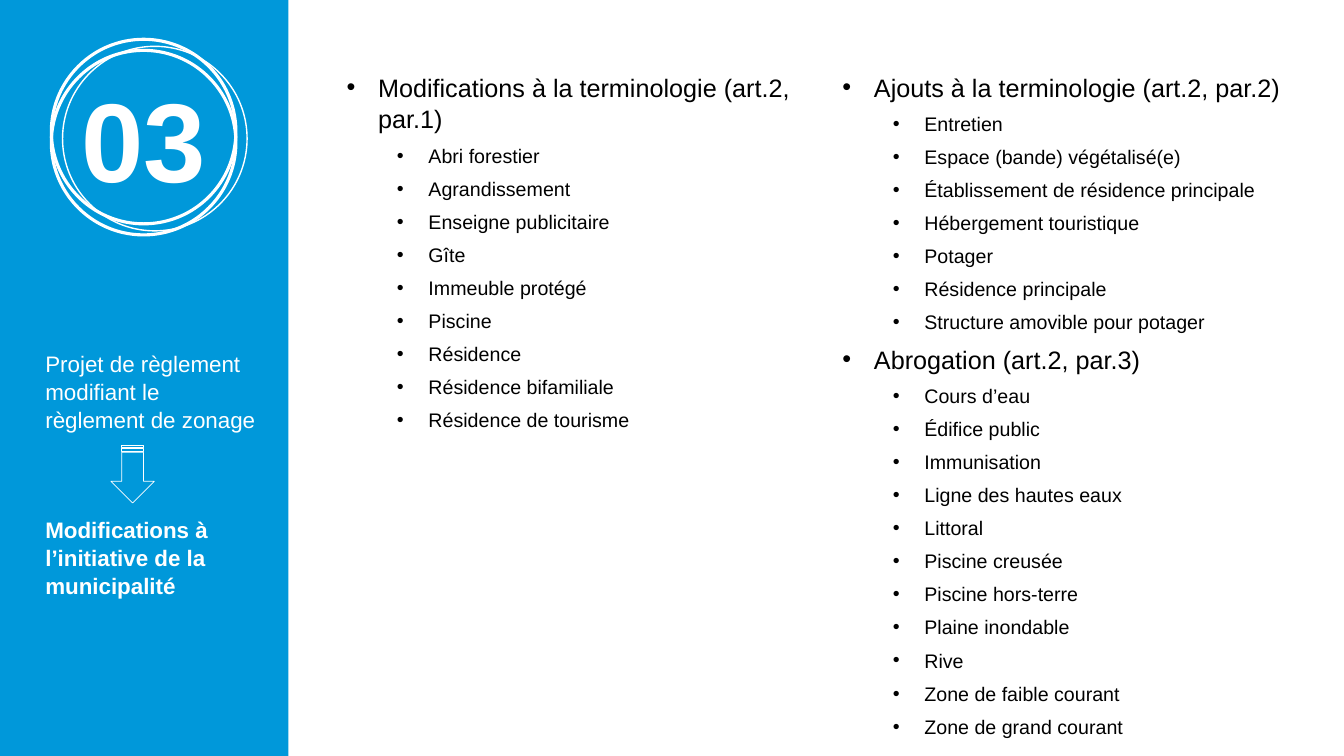
from dataclasses import dataclass

from lxml import etree
from pptx import Presentation
from pptx.dml.color import RGBColor
from pptx.enum.shapes import MSO_SHAPE
from pptx.enum.text import MSO_ANCHOR, MSO_AUTO_SIZE, PP_ALIGN
from pptx.oxml.ns import qn
from pptx.util import Pt


@dataclass(frozen=True)
class Theme:
    blue: RGBColor = RGBColor(0x00, 0x98, 0xDA)
    white: RGBColor = RGBColor(0xFF, 0xFF, 0xFF)
    black: RGBColor = RGBColor(0x00, 0x00, 0x00)
    font: str = "Arial"
    number: int = 80
    heading: int = 18
    sidebar: int = 16
    item: int = 14


theme = Theme()


def add_text(para, text, size, color, bold=False):
    span = para.add_run()
    span.text = text
    formats = {"name": theme.font, "size": Pt(size), "bold": bold}
    for name, value in formats.items():
        setattr(span.font, name, value)
    span.font.color.rgb = color


def add_outline(shapes, kind, left, top, width, height, weight):
    shape = shapes.add_shape(kind, Pt(left), Pt(top), Pt(width), Pt(height))
    shape.shadow.inherit = False
    shape.fill.background()
    shape.line.color.rgb = theme.white
    shape.line.width = Pt(weight)
    return shape


deck = Presentation()
deck.slide_width, deck.slide_height = Pt(960), Pt(540)
slide = deck.slides.add_slide(deck.slide_layouts.get_by_name("Title Only"))

# Blue sidebar
sidebar = slide.shapes.add_shape(MSO_SHAPE.RECTANGLE, 0, 0, Pt(206), Pt(540))
sidebar.shadow.inherit = False
sidebar.fill.solid()
sidebar.fill.fore_color.rgb = theme.blue
sidebar.line.fill.background()

# Section number inside three loose rings
badge = slide.shapes.add_group_shape()
number = badge.shapes.add_textbox(Pt(51), Pt(46.8), Pt(165), Pt(104.4))
number.text_frame.word_wrap = True
add_text(number.text_frame.paragraphs[0], "03", theme.number, theme.white, True)
for left, top, weight in [(36.7, 36, 2.25), (44.7, 33.1, 1), (36.7, 28.1, 2.25)]:
    add_outline(badge.shapes, MSO_SHAPE.OVAL, left, top, 131.8, 131.8, weight)

# Title in the sidebar, brought in front of the blue panel
title = slide.shapes.title
place = {"left": 25.2, "top": 245.5, "width": 165, "height": 181.5}
for name, value in place.items():
    setattr(title, name, Pt(value))
title.element.getparent().append(title.element)
frame = title.text_frame
frame.word_wrap = True
frame.auto_size = MSO_AUTO_SIZE.NONE
frame.vertical_anchor = MSO_ANCHOR.TOP
title_parts = [
    ("Projet de règlement modifiant le règlement de zonage", False, 58),
    ("Modifications à l’initiative de la municipalité", True, 0),
]
for index, (text, bold, gap) in enumerate(title_parts):
    para = frame.add_paragraph() if index else frame.paragraphs[0]
    formats = {"alignment": PP_ALIGN.LEFT, "line_spacing": 1.05, "space_after": Pt(gap)}
    for name, value in formats.items():
        setattr(para, name, value)
    add_text(para, text, theme.sidebar, theme.white, bold)

# Arrow between the two title parts
arrow = add_outline(slide.shapes, MSO_SHAPE.STRIPED_RIGHT_ARROW, 74.2, 323.3, 41, 31, 0.5)
arrow.rotation = 90

# Two columns of bulleted lists
columns = [
    (240.5, 342, {
        "Modifications à la terminologie (art.2, par.1)": [
            "Abri forestier", "Agrandissement", "Enseigne publicitaire", "Gîte",
            "Immeuble protégé", "Piscine", "Résidence", "Résidence bifamiliale",
            "Résidence de tourisme",
        ],
    }),
    (594.7, 480, {
        "Ajouts à la terminologie (art.2, par.2)": [
            "Entretien", "Espace (bande) végétalisé(e)",
            "Établissement de résidence principale", "Hébergement touristique",
            "Potager", "Résidence principale", "Structure amovible pour potager",
        ],
        "Abrogation (art.2, par.3)": [
            "Cours d’eau", "Édifice public", "Immunisation", "Ligne des hautes eaux",
            "Littoral", "Piscine creusée", "Piscine hors-terre", "Plaine inondable",
            "Rive", "Zone de faible courant", "Zone de grand courant",
        ],
    }),
]
for left, height, sections in columns:
    box = slide.shapes.add_textbox(Pt(left), Pt(46.8), Pt(344), Pt(height))
    frame = box.text_frame
    frame.word_wrap = True
    lines = []
    for heading, items in sections.items():
        lines.append((heading, 0, theme.heading))
        lines += [(item, 1, theme.item) for item in items]
    for index, (text, level, size) in enumerate(lines):
        para = frame.add_paragraph() if index else frame.paragraphs[0]
        formats = {"level": level, "line_spacing": 1.05, "space_after": Pt(6)}
        for name, value in formats.items():
            setattr(para, name, value)
        add_text(para, text, size, theme.black)
        properties = para._p.get_or_add_pPr()
        properties.set("marL", str(Pt(22.5 + 36 * level)))
        properties.set("indent", str(Pt(-22.5)))
        etree.SubElement(properties, qn("a:buFont")).set("typeface", theme.font)
        etree.SubElement(properties, qn("a:buChar")).set("char", "•")

deck.save("out.pptx")
